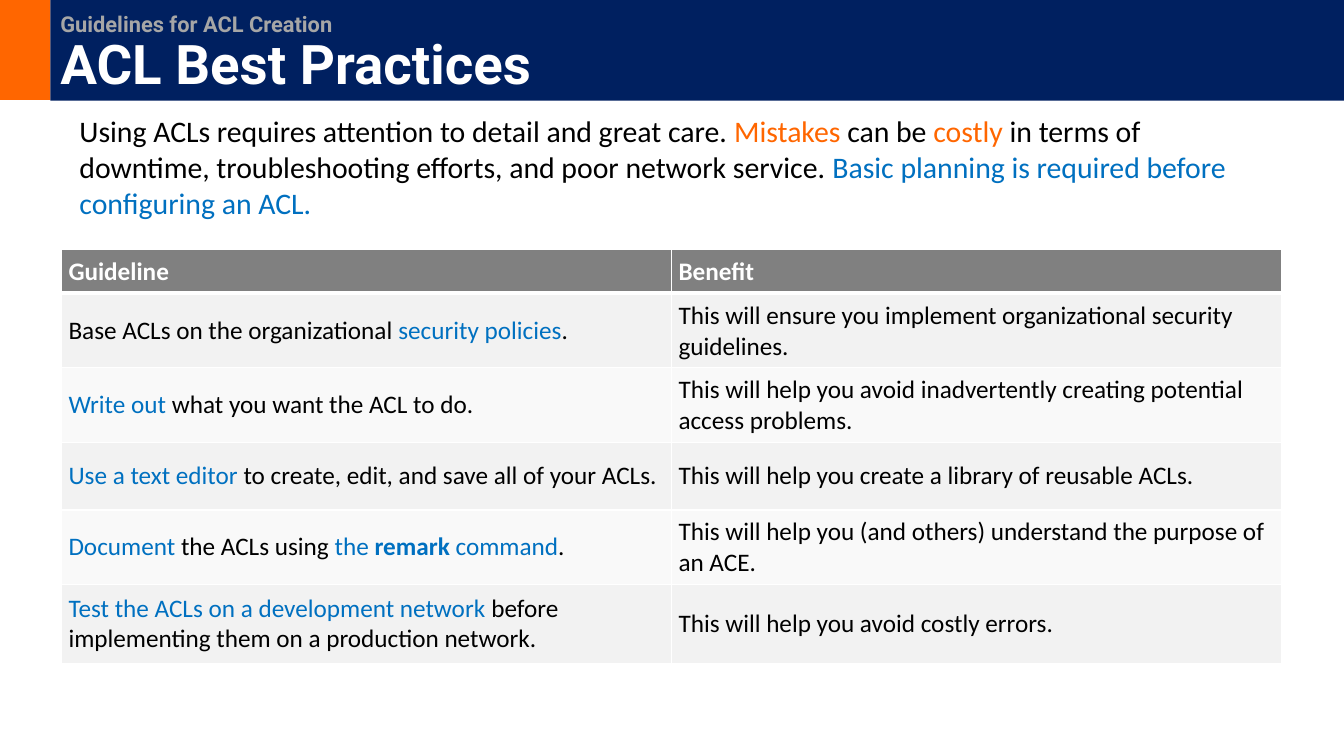
from dataclasses import dataclass

from lxml import etree
from pptx import Presentation
from pptx.dml.color import RGBColor
from pptx.enum.shapes import MSO_SHAPE
from pptx.enum.text import MSO_ANCHOR, PP_ALIGN
from pptx.oxml.ns import qn
from pptx.slide import Slide
from pptx.table import _Cell
from pptx.util import Inches, Pt

RECTANGLE = MSO_SHAPE.RECTANGLE
LEFT = PP_ALIGN.LEFT
MIDDLE, BOTTOM = MSO_ANCHOR.MIDDLE, MSO_ANCHOR.BOTTOM

WHITE = RGBColor(0xFF, 0xFF, 0xFF)
BLACK = RGBColor(0x00, 0x00, 0x00)
ORANGE = RGBColor(0xFF, 0x66, 0x00)
BLUE = RGBColor(0x00, 0x70, 0xC0)
NAVY = RGBColor(0x00, 0x20, 0x60)
SILVER = RGBColor(0xA6, 0xA6, 0xA6)
HEADER_GRAY = RGBColor(0x80, 0x80, 0x80)
ROW_FILLS = (RGBColor(0xF2, 0xF2, 0xF2), RGBColor(0xF9, 0xF9, 0xF9))

BODY_FONT, TITLE_FONT = "Calibri", "Roboto"
KICKER_SIZE, TITLE_SIZE, INTRO_SIZE, TABLE_SIZE = 15.6, 39, 21.3, 18
CELL_MARGIN = Inches(0.07)
COLUMN_WIDTH = Inches(6.05)


@dataclass(frozen=True)
class Span:
    text: str
    color: RGBColor = BLACK
    bold: bool = False


@dataclass(frozen=True)
class TableRow:
    height: float
    guideline: tuple[Span, ...]
    benefit: Span


INTRO = (
    Span("Using ACLs requires attention to detail and great care. "),
    Span("Mistakes", ORANGE),
    Span(" can be "),
    Span("costly", ORANGE),
    Span(" in terms of downtime, troubleshooting efforts, and poor network service. "),
    Span("Basic planning is required before configuring an ACL.", BLUE),
)

ROWS = (
    TableRow(0.42, (Span("Guideline", WHITE, True),), Span("Benefit", WHITE, True)),
    TableRow(
        0.71,
        (Span("Base ACLs on the organizational "), Span("security policies", BLUE), Span(".")),
        Span("This will ensure you implement organizational security guidelines."),
    ),
    TableRow(
        0.71,
        (Span("Write out ", BLUE), Span("what you want the ACL to do.")),
        Span("This will help you avoid inadvertently creating potential access problems."),
    ),
    TableRow(
        0.67,
        (Span("Use a text editor ", BLUE), Span("to create, edit, and save all of your ACLs.")),
        Span("This will help you create a library of reusable ACLs."),
    ),
    TableRow(
        0.71,
        (
            Span("Document", BLUE),
            Span(" the ACLs using "),
            Span("the ", BLUE),
            Span("remark ", BLUE, True),
            Span("command", BLUE),
            Span("."),
        ),
        Span("This will help you (and others) understand the purpose of an ACE."),
    ),
    TableRow(
        0.78,
        (
            Span("Test the ACLs on a development network ", BLUE),
            Span("before implementing them on a production network."),
        ),
        Span("This will help you avoid costly errors."),
    ),
)


def add_spans(para, spans: tuple[Span, ...], size: float, font: str = BODY_FONT) -> None:
    for span in spans:
        run = para.add_run()
        run.text = span.text
        run.font.name = font
        run.font.size = Pt(size)
        run.font.bold = span.bold
        run.font.color.rgb = span.color


def add_block(slide: Slide, left: float, width: float, height: float, fill: RGBColor):
    """Add a plain rectangle along the top edge of the slide."""
    block = slide.shapes.add_shape(
        RECTANGLE, Inches(left), 0, Inches(width), Inches(height)
    )
    block.shadow.inherit = False
    block.fill.solid()
    block.fill.fore_color.rgb = fill
    block.line.fill.background()
    return block


def add_title_bar(slide: Slide) -> None:
    frame = add_block(slide, 0.5, 12.83, 1, NAVY).text_frame
    frame.word_wrap = True
    frame.vertical_anchor = BOTTOM
    para = frame.paragraphs[0]
    para.alignment = LEFT
    para.line_spacing = 0.9
    kicker = Span("Guidelines for ACL Creation", SILVER, True)
    add_spans(para, (kicker,), KICKER_SIZE, TITLE_FONT)
    para.add_line_break()
    line_break = para._p.find(qn("a:br"))
    etree.SubElement(line_break, qn("a:rPr"), sz=str(round(KICKER_SIZE * 100)))
    add_spans(para, (Span("ACL Best Practices", WHITE, True),), TITLE_SIZE, TITLE_FONT)


def add_intro(slide: Slide) -> None:
    box = slide.shapes.add_textbox(Inches(0.69), Inches(1.07), Inches(12.07), Inches(1.3))
    box.text_frame.word_wrap = True
    add_spans(box.text_frame.paragraphs[0], INTRO, INTRO_SIZE)


def set_borders(cell: _Cell, bottom_width: float) -> None:
    properties = cell._tc.get_or_add_tcPr()
    widths = {"a:lnL": 1, "a:lnR": 1, "a:lnT": 1, "a:lnB": bottom_width}
    for position, (tag, width) in enumerate(widths.items()):
        line = etree.Element(qn(tag), w=str(Pt(width)))
        fill = etree.SubElement(line, qn("a:solidFill"))
        etree.SubElement(fill, qn("a:srgbClr"), val=str(WHITE))
        properties.insert(position, line)


def fill_cell(cell: _Cell, spans: tuple[Span, ...], fill: RGBColor, bottom_width: float) -> None:
    cell.margin_left = cell.margin_right = CELL_MARGIN
    cell.margin_top = cell.margin_bottom = CELL_MARGIN
    cell.vertical_anchor = MIDDLE
    cell.fill.solid()
    cell.fill.fore_color.rgb = fill
    set_borders(cell, bottom_width)
    add_spans(cell.text_frame.paragraphs[0], spans, TABLE_SIZE)


def add_guideline_table(slide: Slide) -> None:
    height = Inches(sum(row.height for row in ROWS))
    table = slide.shapes.add_table(
        len(ROWS), 2, Inches(0.61), Inches(2.47), 2 * COLUMN_WIDTH, height
    ).table
    for column in table.columns:
        column.width = COLUMN_WIDTH
    for index, row in enumerate(ROWS):
        table.rows[index].height = Inches(row.height)
        is_header = index == 0
        fill = HEADER_GRAY if is_header else ROW_FILLS[(index - 1) % 2]
        bottom_width = 3 if is_header else 1
        for column, spans in enumerate((row.guideline, (row.benefit,))):
            fill_cell(table.cell(index, column), spans, fill, bottom_width)


def main() -> None:
    deck = Presentation()
    deck.slide_width, deck.slide_height = Inches(13.33), Inches(7.5)
    page = deck.slides.add_slide(deck.slide_layouts[6])
    add_block(page, 0, 0.5, 0.99, ORANGE)
    add_intro(page)
    add_guideline_table(page)
    add_title_bar(page)
    deck.save("out.pptx")


if __name__ == "__main__":
    main()
